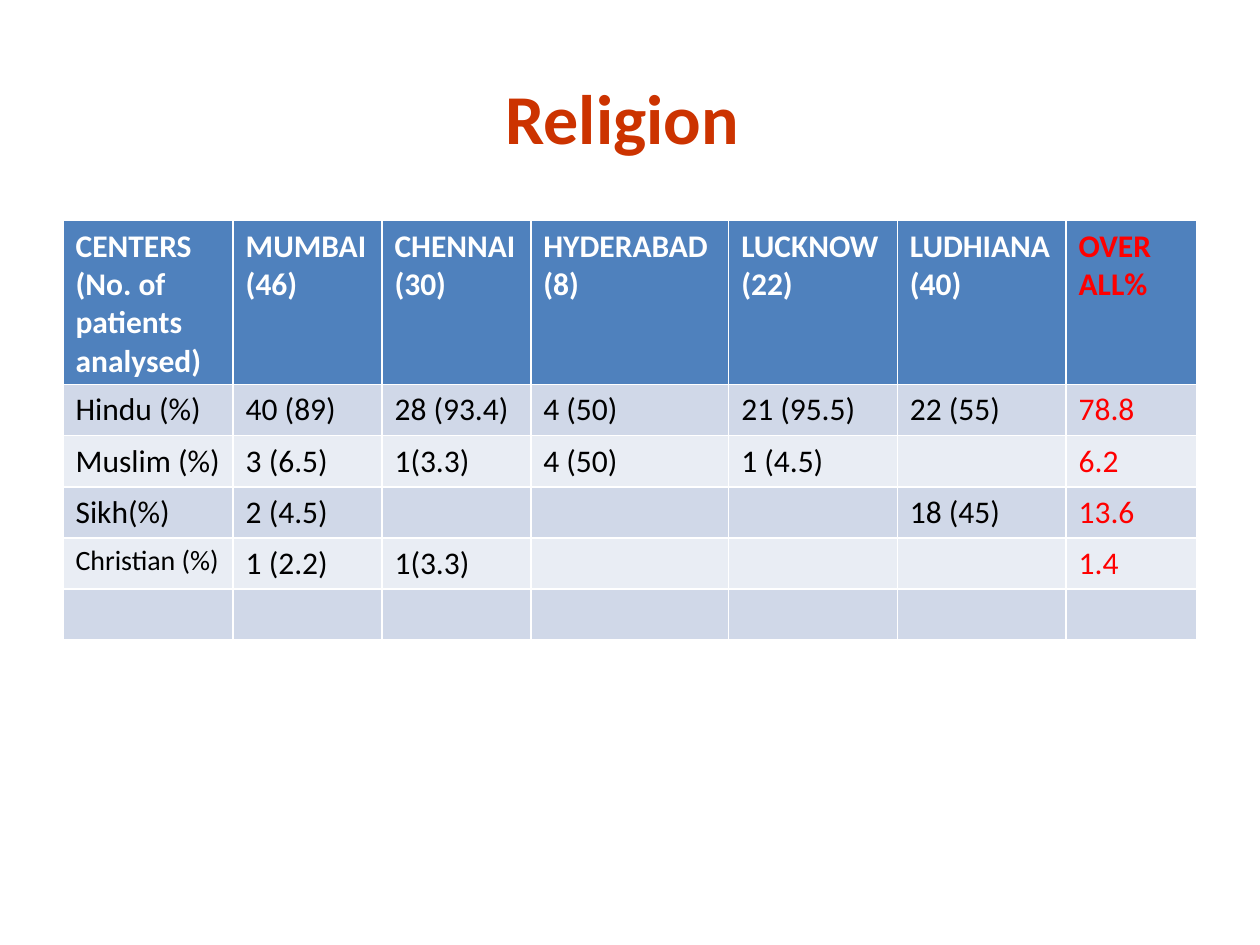
from pptx import Presentation
from pptx.dml.color import RGBColor
from pptx.enum.text import MSO_ANCHOR, PP_ALIGN
from pptx.util import Cm, Pt

MIDDLE = MSO_ANCHOR.MIDDLE
CENTER = PP_ALIGN.CENTER
FONT = "Calibri"
RED = "FF0000"
BANDS = ["D0D8E8", "E9EDF4"]
WIDTHS = [3.43, 3, 3, 3.99, 3.4, 3.4, 2.64]
ROWS = [
    ["CENTERS (No. of patients analysed)", "MUMBAI (46)", "CHENNAI\n(30)",
     "HYDERABAD (8)", "LUCKNOW (22)", "LUDHIANA (40)", "OVER\nALL%"],
    ["Hindu (%)", "40 (89)", "28 (93.4)", "4 (50)", "21 (95.5)", "22 (55)", "78.8"],
    ["Muslim (%)", "3 (6.5)", "1(3.3)", "4 (50)", "1 (4.5)", "", "6.2"],
    ["Sikh(%)", "2 (4.5)", "", "", "", "18 (45)", "13.6"],
    ["Christian (%)", "1 (2.2)", "1(3.3)", "", "", "", "1.4"],
    [""] * 7,
]


def rgb(code):
    return RGBColor.from_string(code)


def style(frame, size, color, bold):
    for para in frame.paragraphs:
        for font in [para.font] + [run.font for run in para.runs]:
            font.name = FONT
            font.size = Pt(size)
            font.bold = bold
            font.color.rgb = rgb(color)


prs = Presentation()
prs.slide_width = Cm(25.4)
prs.slide_height = Cm(19.05)
slide = prs.slides.add_slide(prs.slide_layouts[6])

title = slide.shapes.add_textbox(Cm(1.27), Cm(0.76), Cm(22.86), Cm(3.18))
frame = title.text_frame
frame.word_wrap = True
frame.vertical_anchor = MIDDLE
frame.text = "Religion "
frame.paragraphs[0].alignment = CENTER
style(frame, 40, "CC3300", True)

grid = slide.shapes.add_table(
    len(ROWS), len(WIDTHS), Cm(1.27), Cm(4.45), Cm(22.86), Cm(8.46))
table = grid.table
for col, width in zip(table.columns, WIDTHS):
    col.width = Cm(width)
for row in table.rows:
    row.height = Cm(1.03)
grid.height = Cm(8.46)

for r, row in enumerate(ROWS):
    head = r == 0
    for c, text in enumerate(row):
        cell = table.cell(r, c)
        cell.fill.solid()
        cell.fill.fore_color.rgb = rgb("4F81BD" if head else BANDS[(r - 1) % 2])
        cell.text_frame.text = text
        color = RED if c == len(row) - 1 else "FFFFFF" if head else "000000"
        size = 16 if text == "Christian (%)" else 18
        style(cell.text_frame, size, color, head)

prs.save("out.pptx")
